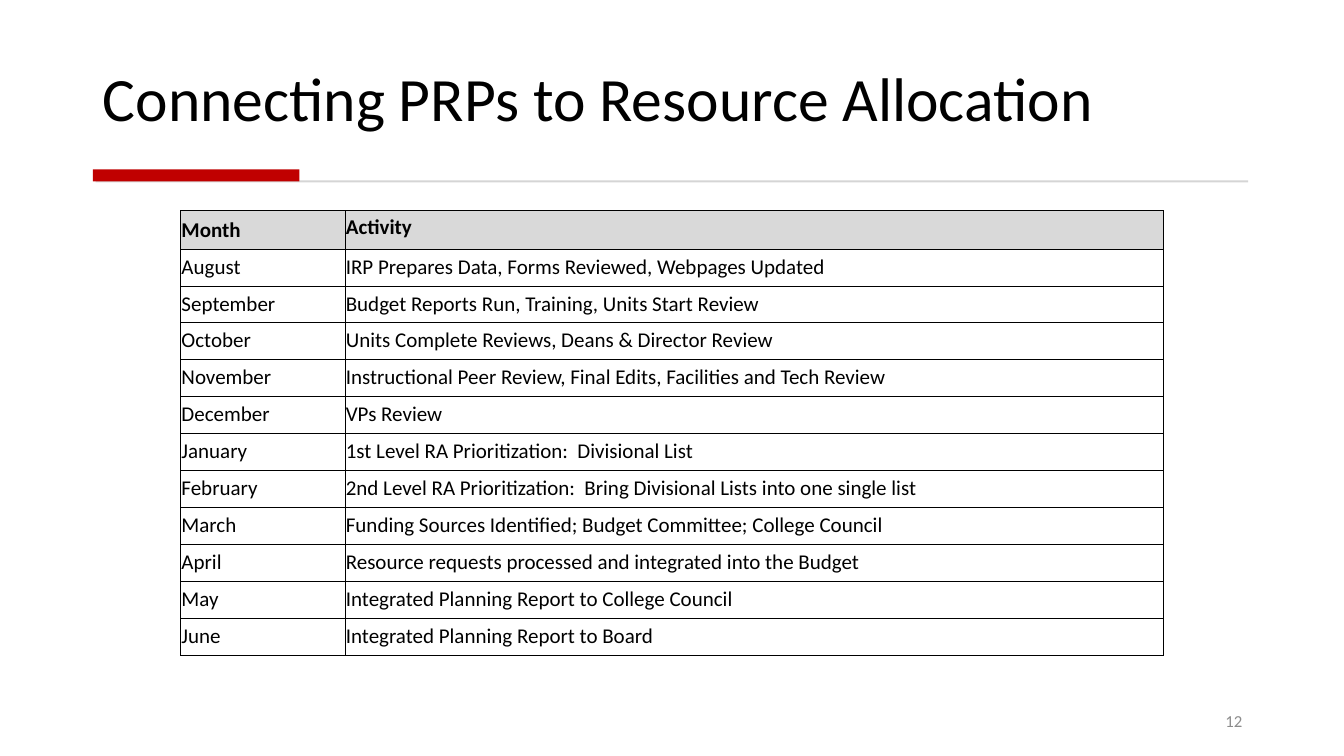
from lxml.etree import SubElement
from pptx import Presentation
from pptx.dml.color import RGBColor
from pptx.enum.shapes import MSO_SHAPE
from pptx.enum.text import MSO_ANCHOR, MSO_AUTO_SIZE, PP_ALIGN
from pptx.oxml.ns import qn
from pptx.util import Pt

TITLE = "Connecting PRPs to Resource Allocation"
SCHEDULE = [
    ("Month", "Activity"),
    ("August", "IRP Prepares Data, Forms Reviewed, Webpages Updated"),
    ("September", "Budget Reports Run, Training, Units Start Review"),
    ("October", "Units Complete Reviews, Deans & Director Review"),
    ("November", "Instructional Peer Review, Final Edits, Facilities and Tech Review"),
    ("December", "VPs Review"),
    ("January", "1st Level RA Prioritization:  Divisional List"),
    ("February", "2nd Level RA Prioritization:  Bring Divisional Lists into one single list"),
    ("March", "Funding Sources Identified; Budget Committee; College Council"),
    ("April", "Resource requests processed and integrated into the Budget"),
    ("May", "Integrated Planning Report to College Council"),
    ("June", "Integrated Planning Report to Board"),
]
PAGE_NUMBER = "12"

# Lengths are px, 100 to the inch
SLIDE_SIZE = (1333, 750)
TITLE_BOX = (92, 28, 1149, 111)
RULES = [((95, 179, 1143, 2), "D5D5D5"), ((92, 168, 205, 12), "C00000")]
TABLE_BOX = (179, 209, 975, 441)
MONTH_WIDTH = 163
HEADER_HEIGHT = 38
CELL_MARGINS = {"margin_left": 1, "margin_right": 1, "margin_top": 1, "margin_bottom": 6}
NUMBER_BOX = (942, 695, 300, 40)
BLACK = "000000"
HEADER_FILL = "D9D9D9"


def px(length):
    return round(length * 9144)


def color(value):
    return RGBColor.from_string(value)


def write(text_frame, text, size, text_color=BLACK, bold=False, align=PP_ALIGN.LEFT):
    paragraph = text_frame.paragraphs[0]
    paragraph.alignment = align
    run = paragraph.add_run()
    run.text = text
    for name, value in {"name": "Calibri", "size": Pt(size), "bold": bold}.items():
        setattr(run.font, name, value)
    run.font.color.rgb = color(text_color)
    return paragraph


def add_borders(cell):
    properties = cell._tc.get_or_add_tcPr()
    for side in ("a:lnL", "a:lnR", "a:lnT", "a:lnB"):
        line = SubElement(properties, qn(side), w=str(Pt(0.5)))
        fill = SubElement(line, qn("a:solidFill"))
        SubElement(fill, qn("a:srgbClr"), val=BLACK)


def add_title(slide):
    title = slide.shapes.title
    for name, length in zip(("left", "top", "width", "height"), TITLE_BOX):
        setattr(title, name, px(length))
    frame = title.text_frame
    frame.auto_size = MSO_AUTO_SIZE.NONE
    frame.vertical_anchor = MSO_ANCHOR.BOTTOM
    write(frame, TITLE, 44).line_spacing = 0.9


def add_rules(slide):
    for box, fill in RULES:
        rule = slide.shapes.add_shape(MSO_SHAPE.RECTANGLE, *map(px, box))
        rule.shadow.inherit = False
        rule.fill.solid()
        rule.fill.fore_color.rgb = color(fill)
        rule.line.fill.background()


def add_schedule(slide):
    frame = slide.shapes.add_table(len(SCHEDULE), 2, *map(px, TABLE_BOX))
    table = frame.table
    table.first_row = table.horz_banding = False
    for column, width in zip(table.columns, (MONTH_WIDTH, TABLE_BOX[2] - MONTH_WIDTH)):
        column.width = px(width)
    body_height = (TABLE_BOX[3] - HEADER_HEIGHT) / (len(SCHEDULE) - 1)
    for row_index, texts in enumerate(SCHEDULE):
        header = row_index == 0
        table.rows[row_index].height = px(HEADER_HEIGHT if header else body_height)
        for column_index, text in enumerate(texts):
            cell = table.cell(row_index, column_index)
            for name, length in CELL_MARGINS.items():
                setattr(cell, name, px(length))
            centred = header and column_index == 1
            cell.vertical_anchor = MSO_ANCHOR.MIDDLE if centred else MSO_ANCHOR.BOTTOM
            add_borders(cell)
            if header:
                cell.fill.solid()
                cell.fill.fore_color.rgb = color(HEADER_FILL)
            else:
                cell.fill.background()
            write(cell.text_frame, text, 15, bold=header)


def add_page_number(slide):
    frame = slide.shapes.add_textbox(*map(px, NUMBER_BOX)).text_frame
    frame.word_wrap = True
    frame.vertical_anchor = MSO_ANCHOR.MIDDLE
    write(frame, PAGE_NUMBER, 12, "8C8C8C", align=PP_ALIGN.RIGHT)


def main():
    presentation = Presentation()
    presentation.slide_width, presentation.slide_height = map(px, SLIDE_SIZE)
    slide = presentation.slides.add_slide(presentation.slide_layouts[5])
    add_title(slide)
    add_rules(slide)
    add_schedule(slide)
    add_page_number(slide)
    presentation.save("out.pptx")


if __name__ == "__main__":
    main()
